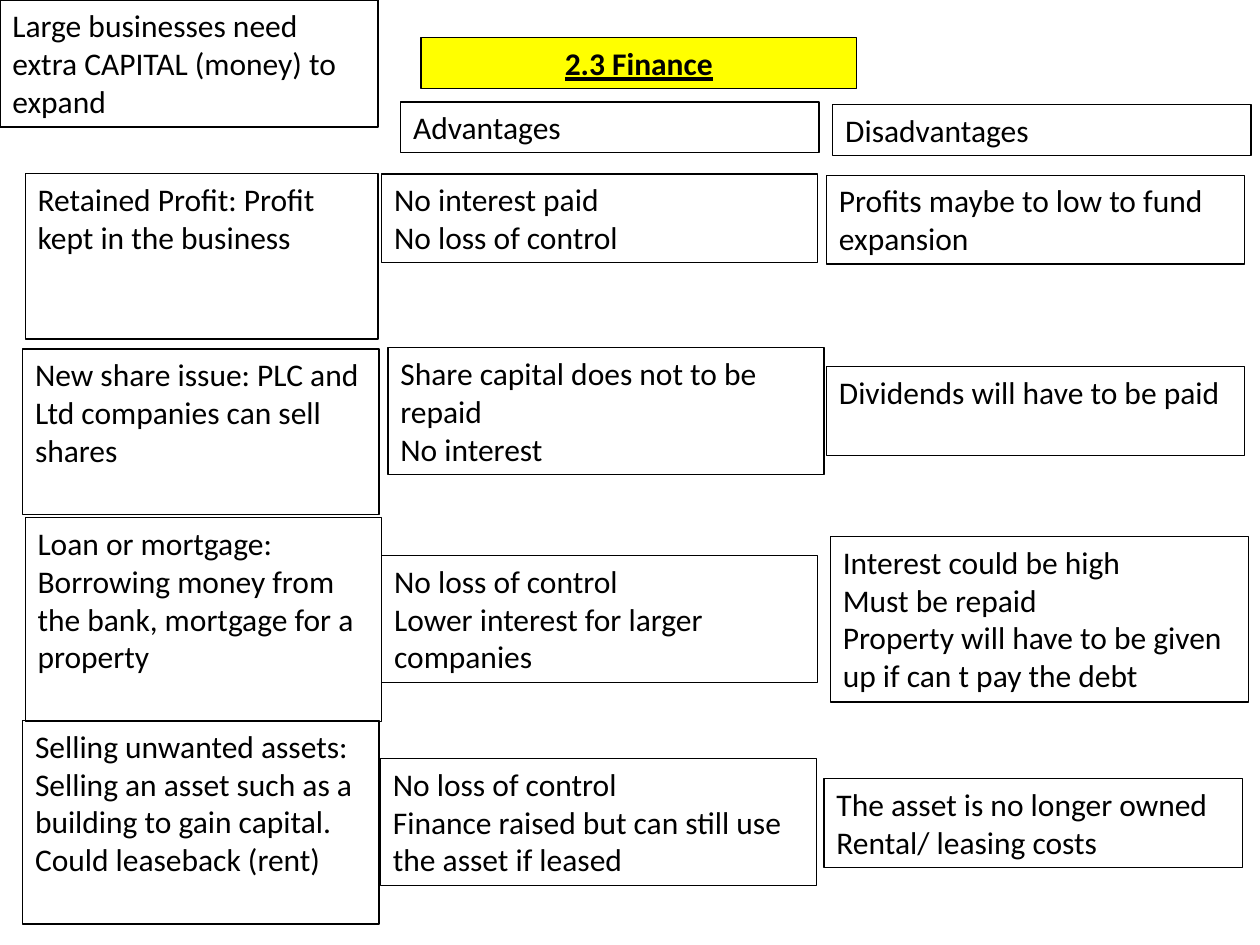
import dataclasses

import pptx
import pptx.dml.color
import pptx.enum.shapes
import pptx.enum.text
import pptx.util

ALIGN = pptx.enum.text.PP_ALIGN
COLS, ROWS = 100, 75  # grid laid over the slide
LINE, PAD = 3.03, 1.0  # rows for a line of text, and for both margins


@dataclasses.dataclass(frozen=True)
class Theme:
    ink: str = "000000"
    mark: str = "FFFF00"
    font: str = "Calibri"
    size: float = 18
    edge: float = 0.75


@dataclasses.dataclass
class Cell:
    dx: float  # shift from the column's left
    dy: float  # shift from the row's top
    lines: int
    text: str
    trim: float = 0  # columns taken off the width


THEME = Theme()
GAPS = (0, 28.4, 63.6)  # left of each column in the table
WIDTHS = (28.3, 34.6, 33.2)
TABLE = (1.8, 13.8)

# Top of each row within the table, then source, advantages, disadvantages
TOPICS = [
    (0, [
        Cell(0.2, 0, 4, "Retained Profit: Profit kept in the business", 0.3),
        Cell(0.1, 0, 2, "No interest paid\nNo loss of control"),
        Cell(0.2, 0.1, 2, "Profits maybe to low to fund expansion")]),
    (13.8, [
        Cell(0, 0.1, 4, "New share issue: PLC and Ltd companies can sell shares"),
        Cell(0.6, 0, 3, "Share capital does not to be repaid\nNo interest"),
        Cell(0.2, 1.5, 2, "Dividends will have to be paid")]),
    (27.3, [
        Cell(0.2, 0, 5, "Loan or mortgage:\nBorrowing money from the bank, "
             "mortgage for a property"),
        Cell(0.1, 3, 3, "No loss of control\nLower interest for larger companies"),
        Cell(0.5, 1.5, 4, "Interest could be high\nMust be repaid\n"
             "Property will have to be given up if can t pay the debt")]),
    (43.4, [
        Cell(0, 0, 5, "Selling unwanted assets:\nSelling an asset such as a "
             "building to gain capital. Could leaseback (rent)"),
        Cell(0, 3, 3, "No loss of control\nFinance raised but can still use "
             "the asset if leased"),
        Cell(0, 4.6, 2, "The asset is no longer owned\nRental/ leasing costs")]),
]


def color(code):
    return pptx.dml.color.RGBColor.from_string(code)


def apply(part, form):
    for name, value in form.items():
        setattr(part, name, value)


def tall(lines):
    return PAD + LINE * lines


def style(shape, box, text, fill=None, align=ALIGN.LEFT, **extra):
    """Place a shape on the grid and give it its frame and text."""
    unit = pptx.util.Inches(10) / COLS
    names = ("left", "top", "width", "height")
    apply(shape, {n: round(v * unit) for n, v in zip(names, box)})
    if fill:
        shape.fill.solid()
        shape.fill.fore_color.rgb = color(fill)
    else:
        shape.fill.background()
    shape.line.color.rgb = color(THEME.ink)
    shape.line.width = pptx.util.Pt(THEME.edge)

    frame = shape.text_frame
    apply(frame, {"text": text, "word_wrap": True,
                  "auto_size": pptx.enum.text.MSO_AUTO_SIZE.NONE,
                  "vertical_anchor": pptx.enum.text.MSO_ANCHOR.TOP})
    form = {"name": THEME.font, "size": pptx.util.Pt(THEME.size), **extra}
    for para in frame.paragraphs:
        para.alignment = align
        for run in para.runs:
            apply(run.font, form)
            run.font.color.rgb = color(THEME.ink)


def panel(slide, box, text):
    kind = pptx.enum.shapes.MSO_SHAPE.RECTANGLE
    shape = slide.shapes.add_shape(kind, 0, 0, 0, 0)
    shape.shadow.inherit = False
    style(shape, box, text)


def header(slide, box):
    """Intro note, title and the two column heads."""
    left, top = box
    panel(slide, (left, top, 30, tall(3)),
          "Large businesses need extra CAPITAL (money) to expand")
    style(slide.shapes.title, (left + 33.4, top + 3, 34.6, tall(1)),
          "2.3 Finance", THEME.mark, ALIGN.CENTER, bold=True, underline=True)
    for dx, dy, text in ((31.8, 8.1, "Advantages"),
                         (66.1, 8.3, "Disadvantages")):
        panel(slide, (left + dx, top + dy, 33.2, tall(1)), text)


def topic(slide, box, cells):
    """One source of finance with its good and bad points."""
    left, top = box
    for gap, wide, cell in zip(GAPS, WIDTHS, cells):
        panel(slide, (left + gap + cell.dx, top + cell.dy,
                      wide - cell.trim, tall(cell.lines)), cell.text)


def main():
    deck = pptx.Presentation()
    apply(deck, {"slide_width": pptx.util.Inches(10),
                 "slide_height": pptx.util.Inches(10 * ROWS / COLS)})
    slide = deck.slides.add_slide(deck.slide_layouts.get_by_name("Title Only"))
    header(slide, (0, 0))
    left, top = TABLE
    for drop, cells in TOPICS:
        topic(slide, (left, top + drop), cells)
    deck.save("out.pptx")


if __name__ == "__main__":
    main()
